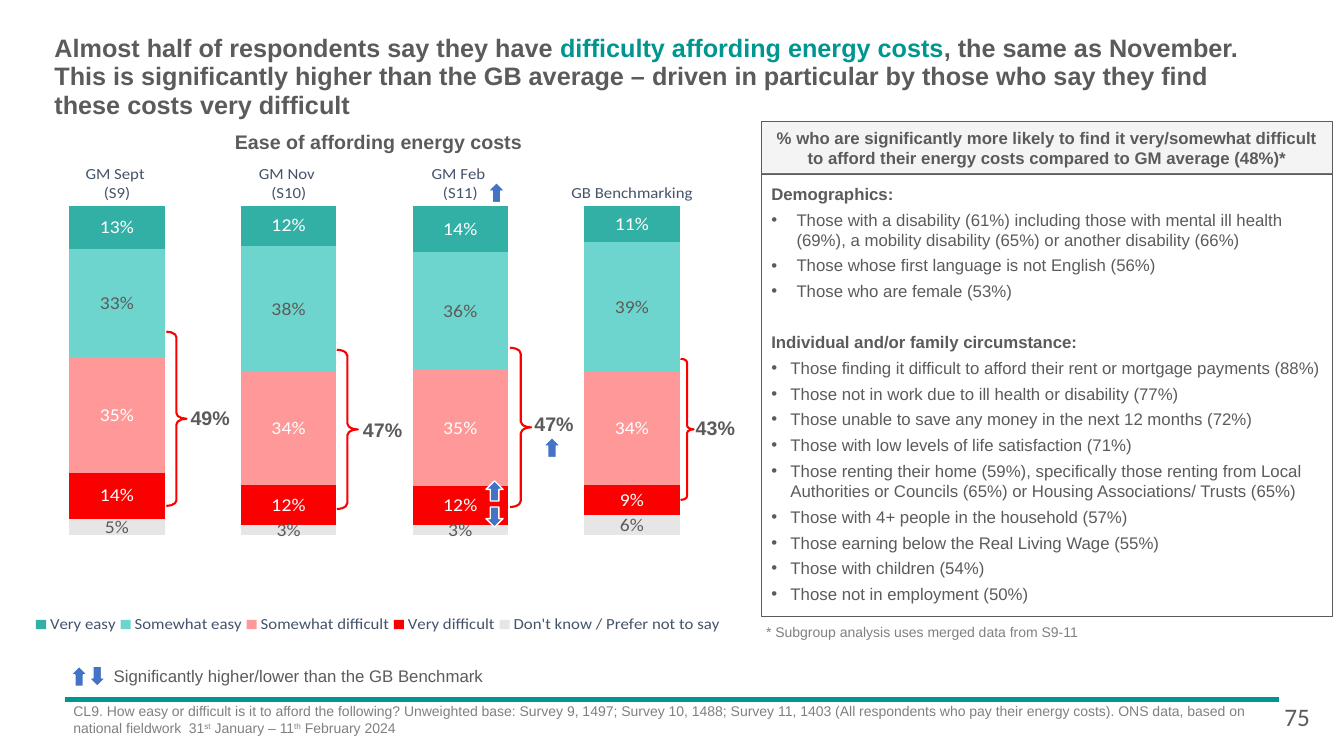
from dataclasses import dataclass

from lxml.etree import SubElement
from pptx import Presentation
from pptx.chart.data import CategoryChartData
from pptx.dml.color import RGBColor
from pptx.enum.chart import XL_CHART_TYPE as ChartType, XL_LABEL_POSITION as LabelPosition
from pptx.enum.chart import XL_LEGEND_POSITION as LegendPosition, XL_TICK_MARK as TickMark
from pptx.enum.shapes import MSO_CONNECTOR as Connector, MSO_SHAPE as Preset
from pptx.enum.text import MSO_ANCHOR as Anchor, MSO_AUTO_SIZE as AutoSize, PP_ALIGN as Align
from pptx.oxml.ns import qn
from pptx.util import Emu, Pt

PX = 9144  # 100 px to the inch

GREY = RGBColor(0x5C, 0x5B, 0x5A)
NOTE_GREY = RGBColor(0x80, 0x80, 0x80)
SILVER = RGBColor(0xD0, 0xCE, 0xCE)
TEAL = RGBColor(0x00, 0x96, 0x90)
RED = RGBColor(0xFA, 0x00, 0x00)
BLUE = RGBColor(0x44, 0x72, 0xC4)
SLATE = RGBColor(0x44, 0x54, 0x6A)
WHITE = RGBColor(0xFF, 0xFF, 0xFF)


@dataclass(frozen=True)
class Series:
    name: str
    values: tuple[float, ...]
    color: RGBColor
    label_color: RGBColor


@dataclass(frozen=True)
class Brace:
    """A brace beside a column and the top left corner of its total."""
    left: int
    top: int
    width: int
    height: int
    total: str
    total_left: int
    total_top: int


@dataclass(frozen=True)
class Arrow:
    left: int
    top: int
    up: bool = True


@dataclass(frozen=True)
class ListSection:
    heading: str
    indent: int
    items: tuple[str, ...]


CATEGORIES = ("GM Sept \n(S9)", "GM Nov \n(S10)", "GM Feb \n(S11)", "GB Benchmarking")
SERIES = (
    Series("Very easy", (0.13, 0.12, 0.14, 0.11), RGBColor(0x33, 0xB0, 0xA6), WHITE),
    Series("Somewhat easy", (0.33, 0.38, 0.36, 0.39), RGBColor(0x6D, 0xD5, 0xCE), GREY),
    Series("Somewhat difficult", (0.35, 0.34, 0.35, 0.34), RGBColor(0xFF, 0x99, 0x99), WHITE),
    Series("Very difficult", (0.14, 0.12, 0.12, 0.09), RED, WHITE),
    Series("Don't know / Prefer not to say", (0.05, 0.03, 0.03, 0.06),
           RGBColor(0xE7, 0xE6, 0xE6), GREY),
)
BRACES = (
    Brace(165, 329, 20, 173, "49%", 189, 403),
    Brace(334, 347, 21, 158, "47%", 360, 415),
    Brace(506, 345, 21, 158, "47%", 530, 409),
    Brace(675, 356, 13, 140, "43%", 690, 413),
)
ARROWS = (
    Arrow(484, 181), Arrow(482, 477), Arrow(482, 503, up=False), Arrow(539, 434),
    Arrow(88, 661, up=False), Arrow(70, 661),
)
SECTIONS = (
    ListSection("Demographics:", 25, (
        "Those with a disability (61%) including those with mental ill health (69%), "
        "a mobility disability (65%) or another disability (66%)",
        "Those whose first language is not English (56%)",
        "Those who are female (53%)",
    )),
    ListSection("Individual and/or family circumstance:", 19, (
        "Those finding it difficult to afford their rent or mortgage payments (88%)",
        "Those not in work due to ill health or disability (77%)",
        "Those unable to save any money in the next 12 months (72%)",
        "Those with low levels of life satisfaction (71%)",
        "Those renting their home (59%), specifically those renting from Local Authorities "
        "or Councils (65%) or Housing Associations/ Trusts (65%)",
        "Those with 4+ people in the household (57%)",
        "Those earning below the Real Living Wage (55%)",
        "Those with children (54%)",
        "Those not in employment (50%)",
    )),
)


def px(*lengths: int) -> list[Emu]:
    return [Emu(length * PX) for length in lengths]


def write(para, text: str, *, size=12, color=GREY, bold=False, name="Arial", raised=False):
    span = para.add_run()
    span.text = text
    font = span.font
    font.size, font.bold, font.name = Pt(size), bold, name
    font.color.rgb = color
    if raised:
        span._r.get_or_add_rPr().set("baseline", "30000")


def add_text(page, place, text="", *, inset=True, wrap=True, align=Align.LEFT, **style):
    """Add a text box and return its first paragraph."""
    frame = page.shapes.add_textbox(*px(*place)).text_frame
    frame.word_wrap = wrap
    if not inset:
        frame.margin_left = frame.margin_right = frame.margin_top = frame.margin_bottom = 0
    para = frame.paragraphs[0]
    para.alignment = align
    if text:
        write(para, text, **style)
    return para


def outline(shape, color: RGBColor, width: float):
    shape.line.color.rgb = color
    shape.line.width = Pt(width)


def add_preset(page, preset, place, *, fill=None, line=GREY, width=0.75):
    shape = page.shapes.add_shape(preset, *px(*place))
    shape.shadow.inherit = False
    if fill is None:
        shape.fill.background()
    else:
        shape.fill.solid()
        shape.fill.fore_color.rgb = fill
    outline(shape, line, width)
    return shape


def set_layout(parent, index: int, inner=False, **fractions: float):
    """Give a chart part a manual layout in fractions of the chart."""
    for old in parent.findall(qn("c:layout")):
        parent.remove(old)
    layout = parent.makeelement(qn("c:layout"))
    parent.insert(index, layout)
    manual = SubElement(layout, qn("c:manualLayout"))
    if inner:
        SubElement(manual, qn("c:layoutTarget")).set("val", "inner")
    for mode in ("xMode", "yMode"):
        SubElement(manual, qn(f"c:{mode}")).set("val", "edge")
    for key, value in fractions.items():
        SubElement(manual, qn(f"c:{key}")).set("val", str(value))


def style_font(font, size: int, color: RGBColor):
    font.size, font.name = Pt(size), "Calibri"
    font.color.rgb = color


def add_energy_chart(page):
    data = CategoryChartData(number_format="0%")
    data.categories = CATEGORIES
    for series in SERIES:
        data.add_series(series.name, series.values)
    chart = page.shapes.add_chart(
        ChartType.COLUMN_STACKED_100, *px(31, 164, 688, 507), data).chart
    chart.has_title = False
    style_font(chart.font, 10, RGBColor(0, 0, 0))
    plot = chart.plots[0]
    plot.gap_width, plot.overlap, plot.vary_by_categories = 80, 100, False
    for drawn, series in zip(plot.series, SERIES):
        drawn.format.fill.solid()
        drawn.format.fill.fore_color.rgb = series.color
        labels = drawn.data_labels
        labels.show_value, labels.position = True, LabelPosition.CENTER
        labels.number_format, labels.number_format_is_linked = "0%", False
        style_font(labels.font, 14, series.label_color)
    values, categories = chart.value_axis, chart.category_axis
    values.minimum_scale, values.maximum_scale = 0, 1
    values.has_major_gridlines = values.visible = False
    values.reverse_order = True
    categories.major_tick_mark = TickMark.NONE
    categories.format.line.fill.background()
    style_font(categories.tick_labels.font, 12, SLATE)
    chart.has_legend = True
    legend = chart.legend
    legend.position, legend.include_in_layout = LegendPosition.BOTTOM, False
    style_font(legend.font, 12, SLATE)
    set_layout(legend._element, 1, x=0, y=0.85, w=1, h=0.08)
    set_layout(plot._element.getparent(), 0, inner=True, x=0, y=0, w=0.99, h=0.7)


def fill_title(title):
    title.left, title.top, title.width, title.height = px(44, 29, 1236, 79)
    frame = title.text_frame
    frame.auto_size, frame.vertical_anchor = AutoSize.NONE, Anchor.TOP
    para = frame.paragraphs[0]
    para.alignment, para.line_spacing = Align.LEFT, 0.95
    write(para, "Almost half of respondents say they have ", size=18, bold=True)
    write(para, "difficulty affording energy costs", size=18, bold=True, color=TEAL)
    write(para, ", the same as November. This is significantly higher than the GB average – driven "
          "in particular by those who say they find these costs very difficult", size=18, bold=True)


def add_list_line(frame, text: str, indent=0, before=0, bold=False):
    para = frame.paragraphs[0]
    if para.runs:
        para = frame.add_paragraph()
    properties = para._p.get_or_add_pPr()
    properties.set("marL", str(indent * PX))
    properties.set("indent", str(-indent * PX))
    if indent:
        SubElement(properties, qn("a:buChar")).set("char", "•")
    else:
        SubElement(properties, qn("a:buNone"))
    para.space_before, para.space_after = Pt(before), Pt(4)
    write(para, text, bold=bold)


def fill_list(body):
    body.left, body.top, body.width, body.height = px(755, 172, 567, 440)
    body.fill.solid()
    body.fill.fore_color.rgb = WHITE
    outline(body, GREY, 0.75)
    frame = body.text_frame
    frame.auto_size, frame.vertical_anchor = AutoSize.NONE, Anchor.TOP
    frame.margin_left = frame.margin_right = frame.margin_top = frame.margin_bottom = Emu(10 * PX)
    for number, section in enumerate(SECTIONS):
        add_list_line(frame, section.heading, before=18 * number, bold=True)
        for item in section.items:
            add_list_line(frame, item, section.indent)


def add_list_header(page):
    header = add_preset(page, Preset.RECTANGLE, (755, 121, 567, 52), fill=SILVER)
    color = header._element.spPr.find(qn("a:solidFill"))[0]
    SubElement(color, qn("a:alpha")).set("val", "21000")
    header.text_frame.word_wrap = True
    header.text_frame.vertical_anchor = Anchor.MIDDLE
    para = header.text_frame.paragraphs[0]
    para.alignment, para.space_after = Align.CENTER, Pt(4)
    write(para, "% who are significantly more likely to find it very/somewhat difficult "
          "to afford their energy costs compared to GM average (48%)*", bold=True)


def add_footer(page):
    rule = page.shapes.add_connector(Connector.STRAIGHT, *px(64, 694, 1269, 694))
    outline(rule, TEAL, 3)
    SubElement(rule._element.spPr, qn("a:effectLst"))
    source = add_text(page, (63, 692, 1198, 56))
    for text, raised in (
        ("CL9. How easy or difficult is it to afford the following? Unweighted base: Survey 9, 1497; "
         "Survey 10, 1488; Survey 11, 1403 (All respondents who pay their energy costs). ONS data, "
         "based on national fieldwork  31", False),
        ("st", True), (" January – 11", False), ("th", True), (" February 2024", False),
    ):
        write(source, text, size=10, color=NOTE_GREY, raised=raised)
    add_text(page, (1264, 691, 53, 40), "75", size=18, name="Calibri")


def main():
    deck = Presentation()
    deck.slide_width, deck.slide_height = px(1333, 750)
    page = deck.slides.add_slide(deck.slide_layouts[1])
    fill_title(page.shapes.title)
    fill_list(page.placeholders[1])
    add_list_header(page)
    add_text(page, (120, 129, 511, 24), "Ease of affording energy costs",
             inset=False, align=Align.CENTER, size=14, bold=True)
    add_energy_chart(page)
    for brace in BRACES:
        place = (brace.left, brace.top, brace.width, brace.height)
        shape = add_preset(page, Preset.RIGHT_BRACE, place, line=RED, width=1.5)
        shape.adjustments[0], shape.adjustments[1] = 0.28, 0.5
        add_text(page, (brace.total_left, brace.total_top, 39, 24), brace.total,
                 inset=False, wrap=False, size=14, bold=True)
    for arrow in ARROWS:
        shape = add_preset(page, Preset.DOWN_ARROW, (arrow.left, arrow.top, 17, 20),
                           fill=BLUE, line=WHITE, width=1)
        shape.rotation = 180 if arrow.up else 0
    add_text(page, (103, 656, 390, 30), "Significantly higher/lower than the GB Benchmark", wrap=False)
    add_text(page, (750, 614, 355, 27), "* Subgroup analysis uses merged data from S9-11",
             size=10, color=NOTE_GREY)
    add_footer(page)
    deck.save("out.pptx")


if __name__ == "__main__":
    main()
